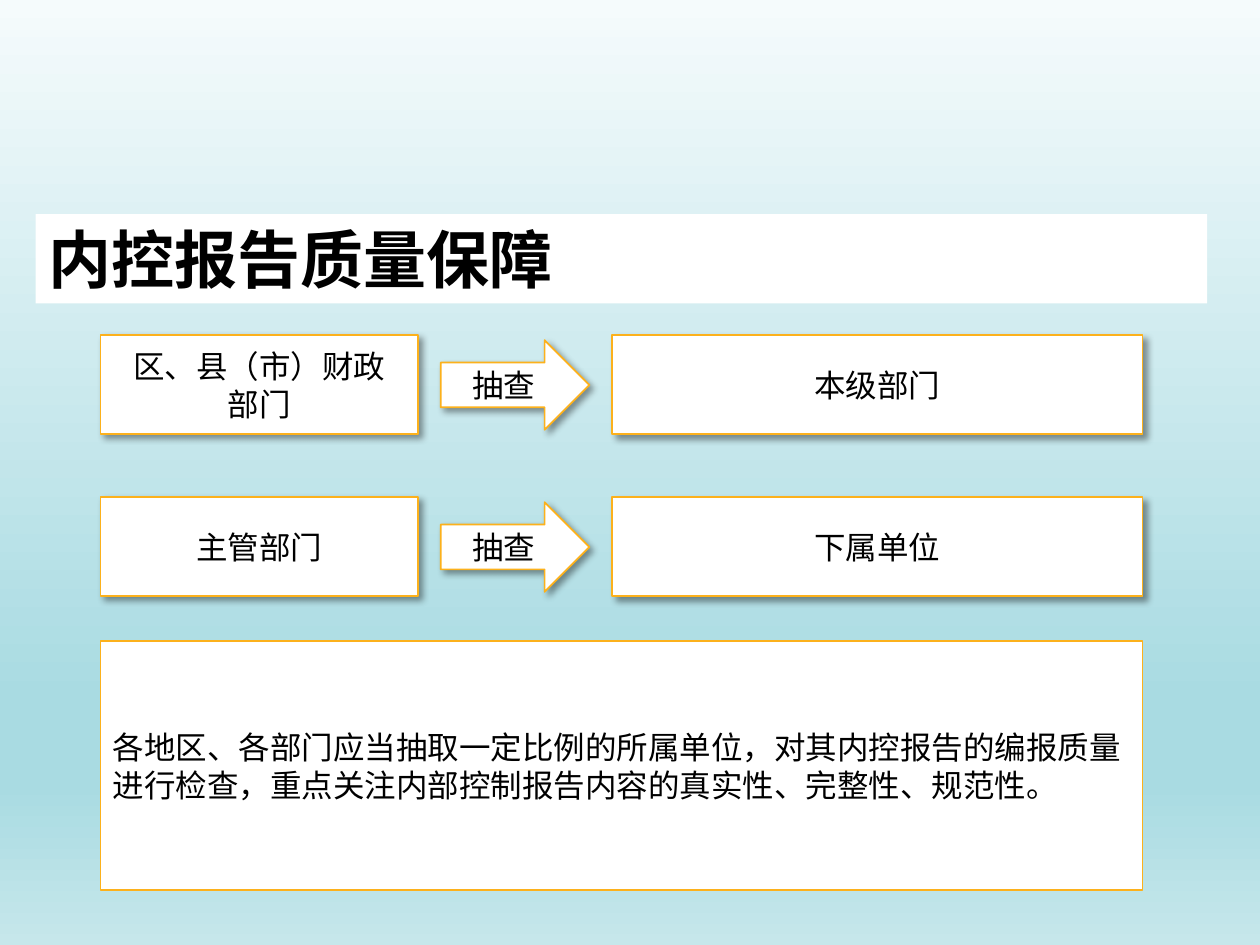
from pptx import Presentation
from pptx.dml.color import RGBColor
from pptx.enum.shapes import MSO_SHAPE as Shape
from pptx.enum.text import MSO_ANCHOR as Anchor, PP_ALIGN as Align
from pptx.oxml.ns import qn
from pptx.util import Pt
from lxml import etree

FONT = "Noto Sans CJK SC"
COLORS = {"panel": "FFFFFF", "border": "FCB11C", "text": "000000", "shadow": "000000"}
SKY = [(0, "F5FBFC"), (74, "A9DBE2"), (83, "A9DBE2"), (100, "C6E7EB")]


def add_panel(kind, left, top, width, height, lines, size=18, bold=False,
              align=Align.CENTER, anchor=Anchor.MIDDLE, border=True):
    panel = slide.shapes.add_shape(kind, Pt(left), Pt(top), Pt(width), Pt(height))
    panel.shadow.inherit = False
    panel.fill.solid()
    panel.fill.fore_color.rgb = RGBColor.from_string(COLORS["panel"])
    if border:
        panel.line.color.rgb = RGBColor.from_string(COLORS["border"])
        panel.line.width = Pt(1)
    else:
        panel.line.fill.background()
    frame = panel.text_frame
    frame.word_wrap = True
    frame.vertical_anchor = anchor
    for i, line in enumerate(lines):
        paragraph = frame.add_paragraph() if i else frame.paragraphs[0]
        paragraph.alignment = align
        run = paragraph.add_run()
        run.text = line
        run.font.size = Pt(size)
        run.font.bold = bold
        run.font.color.rgb = RGBColor.from_string(COLORS["text"])
        run.font.name = FONT
        etree.SubElement(run.font._element, qn("a:ea"), typeface=FONT)
    return panel


def add_shadow(panel):
    effects = panel._element.spPr.find(qn("a:effectLst"))
    shadow = etree.SubElement(effects, qn("a:outerShdw"), blurRad=str(Pt(4)), dist=str(Pt(3)),
                              dir="2700000", algn="tl", rotWithShape="0")
    color = etree.SubElement(shadow, qn("a:srgbClr"), val=COLORS["shadow"])
    etree.SubElement(color, qn("a:alpha"), val="40000")


prs = Presentation()
prs.slide_width, prs.slide_height = Pt(720), Pt(540)
slide = prs.slides.add_slide(prs.slide_layouts[6])

sky = slide.background.fill
sky.gradient()
sky.gradient_angle = 270
stops = slide._element.find(".//" + qn("a:gsLst"))
for stop in list(stops):
    stops.remove(stop)
for position, color in SKY:
    stop = etree.SubElement(stops, qn("a:gs"), pos=str(position * 1000))
    etree.SubElement(stop, qn("a:srgbClr"), val=color)

add_panel(Shape.RECTANGLE, 20.4, 122.4, 669.4, 51, ["内控报告质量保障"], size=36, bold=True,
          align=Align.LEFT, anchor=Anchor.TOP, border=False)

checks = [(["区、县（市）财政", "部门"], "本级部门"), (["主管部门"], "下属单位")]
for row, (inspector, inspected) in enumerate(checks):
    top = 191.5 + row * 92.6
    add_shadow(add_panel(Shape.RIGHT_ARROW, 251.8, top + 2.9, 85, 51.2, ["抽查"]))
    add_shadow(add_panel(Shape.RECTANGLE, 57.4, top, 181.6, 56.7, inspector))
    add_shadow(add_panel(Shape.RECTANGLE, 349.9, top, 303, 56.7, [inspected]))

add_panel(Shape.FLOWCHART_PROCESS, 57.4, 366.4, 595.5, 142.2,
          ["各地区、各部门应当抽取一定比例的所属单位，对其内控报告的编报质量进行检查，"
           "重点关注内部控制报告内容的真实性、完整性、规范性。"], align=Align.LEFT)

prs.save("out.pptx")
